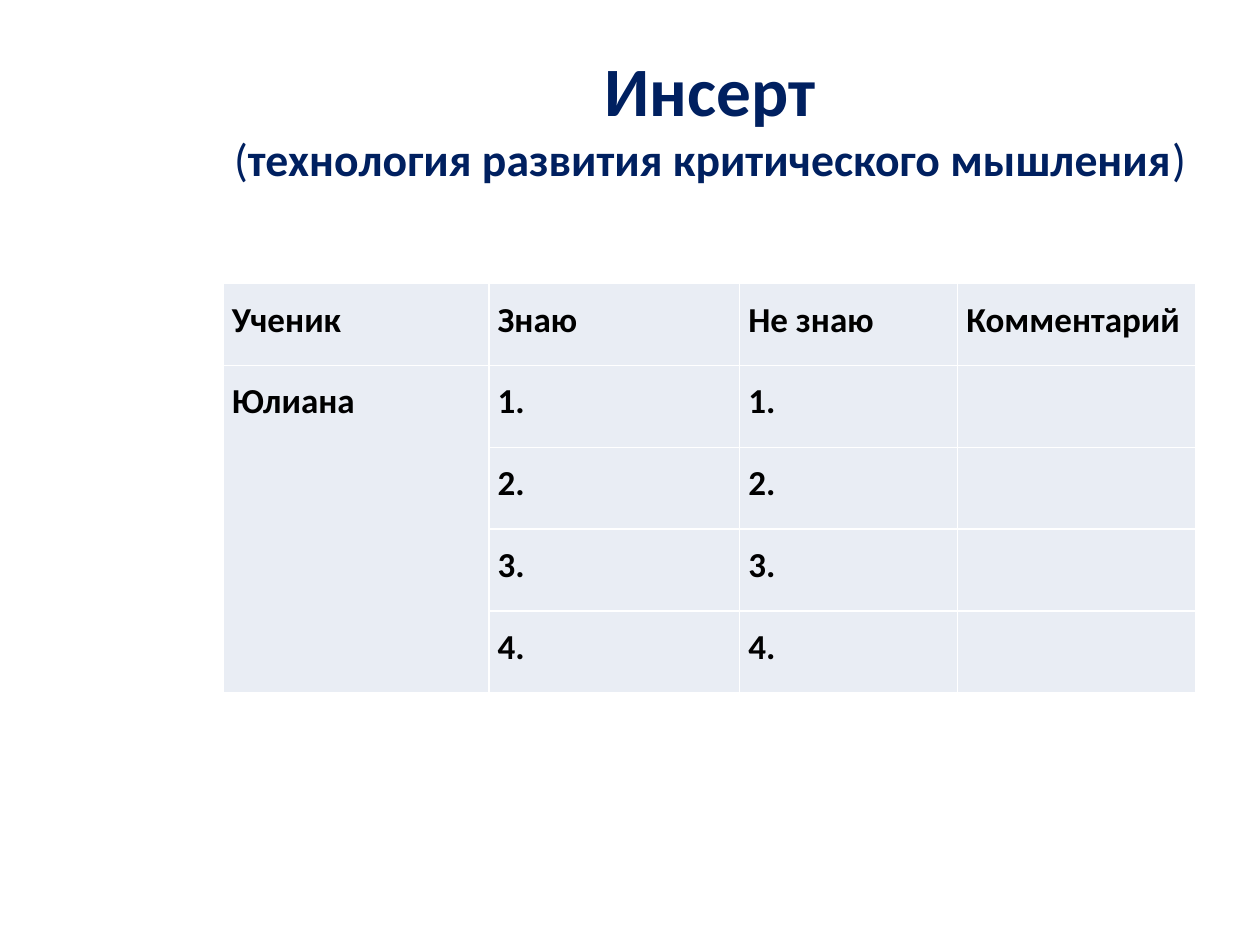
from lxml import etree
from pptx import Presentation
from pptx import util as u
from pptx.dml.color import RGBColor
from pptx.enum import text
from pptx.oxml.ns import qn


def color(hex_code):
    return RGBColor.from_string(hex_code)


class SlideBuilder:
    FONT = "Calibri"
    NAVY, BLACK, WHITE, CELL_FILL = "002060", "000000", "FFFFFF", "E9EDF4"
    CELL_MARGIN = u.Inches(0.07)

    def __init__(self, prs):
        self.s = prs.slides.add_slide(prs.slide_layouts[5])
        self.s.background.fill.solid()
        self.s.background.fill.fore_color.rgb = color(self.WHITE)

    def format_run(self, r, size, hex_code, bold=True):
        r.font.name, r.font.size, r.font.bold = self.FONT, u.Pt(size), bold
        r.font.color.rgb = color(hex_code)

    def title(self, box, heading, subtitle):
        sp = self.s.shapes.title
        sp.left, sp.top, sp.width, sp.height = map(u.Inches, box)
        tf = sp.text_frame
        tf.word_wrap = True
        tf.auto_size = text.MSO_AUTO_SIZE.NONE
        tf.vertical_anchor = text.MSO_ANCHOR.MIDDLE
        p = tf.paragraphs[0]
        p.alignment = text.PP_ALIGN.CENTER
        p.text = heading
        self.format_run(p.runs[0], 39.6, self.NAVY)
        p.add_line_break()
        for part, bold in (("(", False), (subtitle, True), (")", False)):
            r = p.add_run()
            r.text = part
            self.format_run(r, 26.1, self.NAVY, bold)

    def borders(self, cell):
        tc_pr = cell._tc.get_or_add_tcPr()
        for side in ("lnL", "lnR", "lnT", "lnB"):
            ln = etree.SubElement(tc_pr, qn(f"a:{side}"), w=str(u.Pt(1)))
            fill = etree.SubElement(ln, qn("a:solidFill"))
            etree.SubElement(fill, qn("a:srgbClr"), val=self.WHITE)

    def cell(self, cell, label):
        self.borders(cell)
        cell.fill.solid()
        cell.fill.fore_color.rgb = color(self.CELL_FILL)
        cell.margin_left = cell.margin_right = self.CELL_MARGIN
        cell.margin_top = cell.margin_bottom = self.CELL_MARGIN
        if label:
            cell.text = label
            p = cell.text_frame.paragraphs[0]
            p.line_spacing = 1.15
            self.format_run(p.runs[0], 20, self.BLACK)

    def table(self, left, top, col_widths, row_height, rows):
        frame = self.s.shapes.add_table(
            len(rows), len(col_widths), u.Inches(left), u.Inches(top),
            u.Inches(sum(col_widths)), u.Inches(row_height * len(rows)))
        table = frame.table
        table.first_row = table.horz_banding = False
        for column, width in zip(table.columns, col_widths):
            column.width = u.Inches(width)
        for i, labels in enumerate(rows):
            table.rows[i].height = u.Inches(row_height)
            for j, label in enumerate(labels):
                self.cell(table.cell(i, j), label)
        return table


def main():
    prs = Presentation()
    prs.slide_width, prs.slide_height = u.Inches(10), u.Inches(7.5)
    slide = SlideBuilder(prs)
    slide.title((1.54, 0.3, 8.19, 1.25), "Инсерт",
                "технология развития критического мышления")
    rows = [("Ученик", "Знаю", "Не знаю", "Комментарий")]
    for n in range(1, 5):
        rows.append(("Юлиана" if n == 1 else "", f"{n}.", f"{n}.", ""))
    table = slide.table(1.77, 2.25, (2.11, 1.99, 1.73, 1.89), 0.65, rows)
    table.cell(1, 0).merge(table.cell(4, 0))
    prs.save("out.pptx")


if __name__ == "__main__":
    main()
